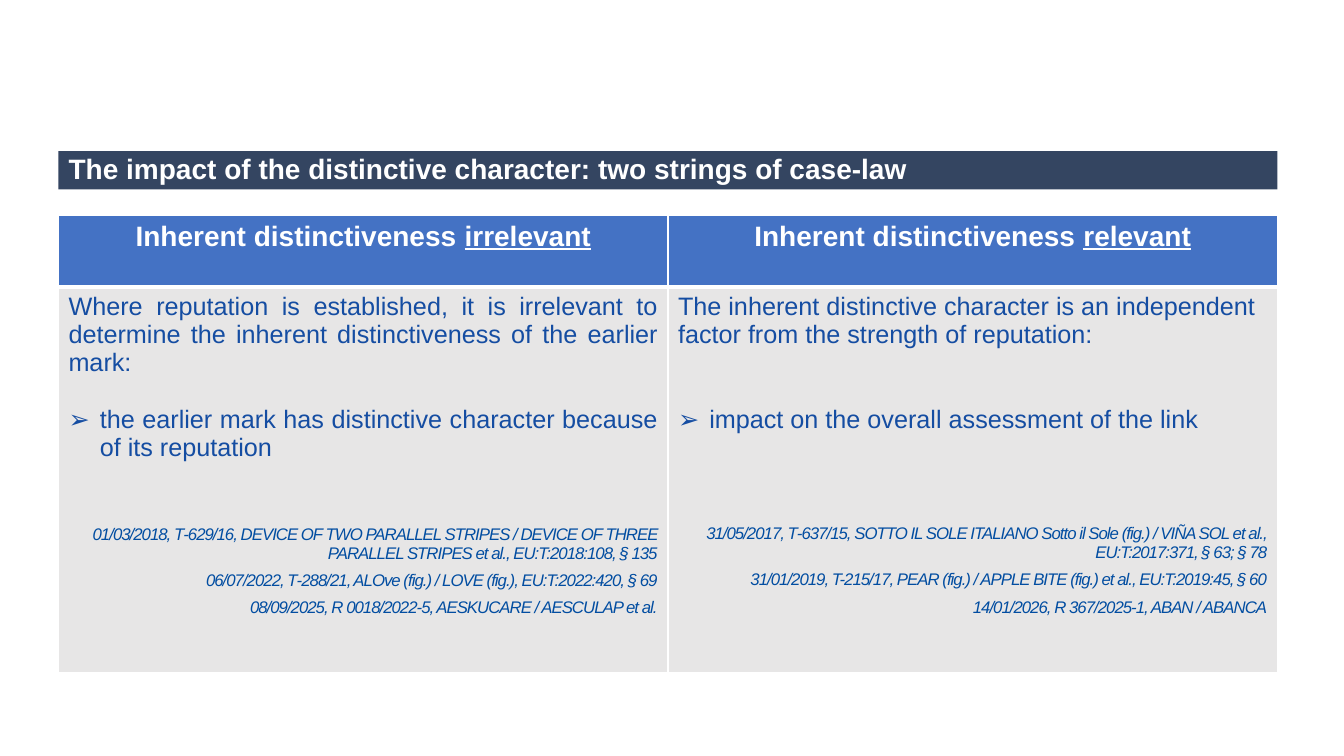
from lxml.etree import SubElement as Sub
from pptx import Presentation
from pptx.dml.color import RGBColor
from pptx.enum.text import MSO_ANCHOR as Anchor, MSO_AUTO_SIZE as Fit, PP_ALIGN as Align
from pptx.oxml.ns import qn
from pptx.util import Inches, Pt

NAVY, BLUE, GREY, WHITE = "344561", "4472C4", "E7E6E6", "FFFFFF"
TEXT, CITE = "154DA2", "024DA1"


def paint(item, color):
    item.solid()
    item.fore_color.rgb = RGBColor.from_string(color)


def write(frame, text, under="", size=18, color=TEXT, bold=False, slant=False,
          align=Align.LEFT, before=0, bullet="", tight=0):
    """Fill the first empty paragraph, or add one; under is an underlined ending."""
    para = frame.paragraphs[0] if not frame.text else frame.add_paragraph()
    para.alignment = align
    if bullet:
        props = para._p.get_or_add_pPr()
        props.set("marL", str(Inches(0.31)))
        props.set("indent", str(Inches(-0.31)))
        Sub(props, qn("a:buFont"), typeface="Arial")
        Sub(props, qn("a:buChar"), char=bullet)
    if before:
        para.space_before = Pt(before)
    for part, line in ((text, False), (under, True)):
        if part:
            run = para.add_run()
            run.text = part
            font = run.font
            font.name, font.size = "Arial", Pt(size)
            font.bold, font.italic, font.underline = bold, slant, line
            paint(font.fill, color)
            if tight:
                run._r.get_or_add_rPr().set("spc", str(int(tight * 100)))
    return para


deck = Presentation()
deck.slide_width, deck.slide_height = Inches(13.33), Inches(7.5)
slide = deck.slides.add_slide(deck.slide_layouts[5])
left, width = Inches(0.58), Inches(12.09)

# Title bar
title = slide.shapes.title
title.left, title.top, title.width, title.height = left, Inches(1.5), width, Inches(0.38)
paint(title.fill, NAVY)
frame = title.text_frame
frame.auto_size, frame.word_wrap = Fit.NONE, True
frame.vertical_anchor = Anchor.MIDDLE
para = write(frame, "The impact of the distinctive character: two strings of case-law",
             size=20, color=WHITE, bold=True)
para.line_spacing = 0.9

# Each side: heading end, lead, point, gap above point, gap above cases, alignment, cases
sides = [
    ("irrelevant",
     "Where reputation is established, it is irrelevant to determine the inherent "
     "distinctiveness of the earlier mark: ",
     "the earlier mark has distinctive character because of its reputation",
     20.5, 45, Align.JUSTIFY,
     ["01/03/2018, T‑629/16, DEVICE OF TWO PARALLEL STRIPES / DEVICE OF THREE "
      "PARALLEL STRIPES et al., EU:T:2018:108, § 135",
      "06/07/2022, T‑288/21, ALOve (fig.) / LOVE (fig.), EU:T:2022:420, § 69",
      "08/09/2025, R 0018/2022‑5, AESKUCARE / AESCULAP et al."]),
    ("relevant",
     "The inherent distinctive character is an independent factor from the strength "
     "of reputation:",
     "impact on the overall assessment of the link",
     41, 64.5, Align.LEFT,
     ["31/05/2017, T‑637/15, SOTTO IL SOLE ITALIANO Sotto il Sole (fig.) / VIÑA SOL "
      "et al., EU:T:2017:371, § 63; § 78",
      "31/01/2019, T-215/17, PEAR (fig.) / APPLE BITE (fig.) et al., EU:T:2019:45, § 60",
      "14/01/2026, R 367/2025-1, ABAN / ABANCA"]),
]

# Table
table = slide.shapes.add_table(2, 2, left, Inches(2.14), width, Inches(4.53)).table
for row, high in zip(table.rows, (0.71, 3.82)):
    row.height = Inches(high)

for col, (end, lead, point, gap, drop, align, cases) in enumerate(sides):
    head, body = table.cell(0, col), table.cell(1, col)
    write(head.text_frame, "Inherent distinctiveness ", under=end, size=20,
          color=WHITE, bold=True, align=Align.CENTER)
    frame = body.text_frame
    write(frame, lead, align=align)
    write(frame, point, align=align, before=gap, bullet="➢")
    for n, case in enumerate(cases):
        write(frame, case, size=12, color=CITE, slant=True, align=Align.RIGHT,
              before=6 if n else drop, tight=-0.7)

    # Borders and fills, with a thick rule between the rows
    for cell, fill, top, base in ((head, BLUE, 1, 3), (body, GREY, 3, 1)):
        props = cell._tc.get_or_add_tcPr()
        for side, wide in (("L", 1), ("R", 1), ("T", top), ("B", base)):
            edge = Sub(props, qn("a:ln" + side), w=str(Pt(wide)))
            Sub(Sub(edge, qn("a:solidFill")), qn("a:srgbClr"), val=WHITE)
        paint(cell.fill, fill)

deck.save("out.pptx")
